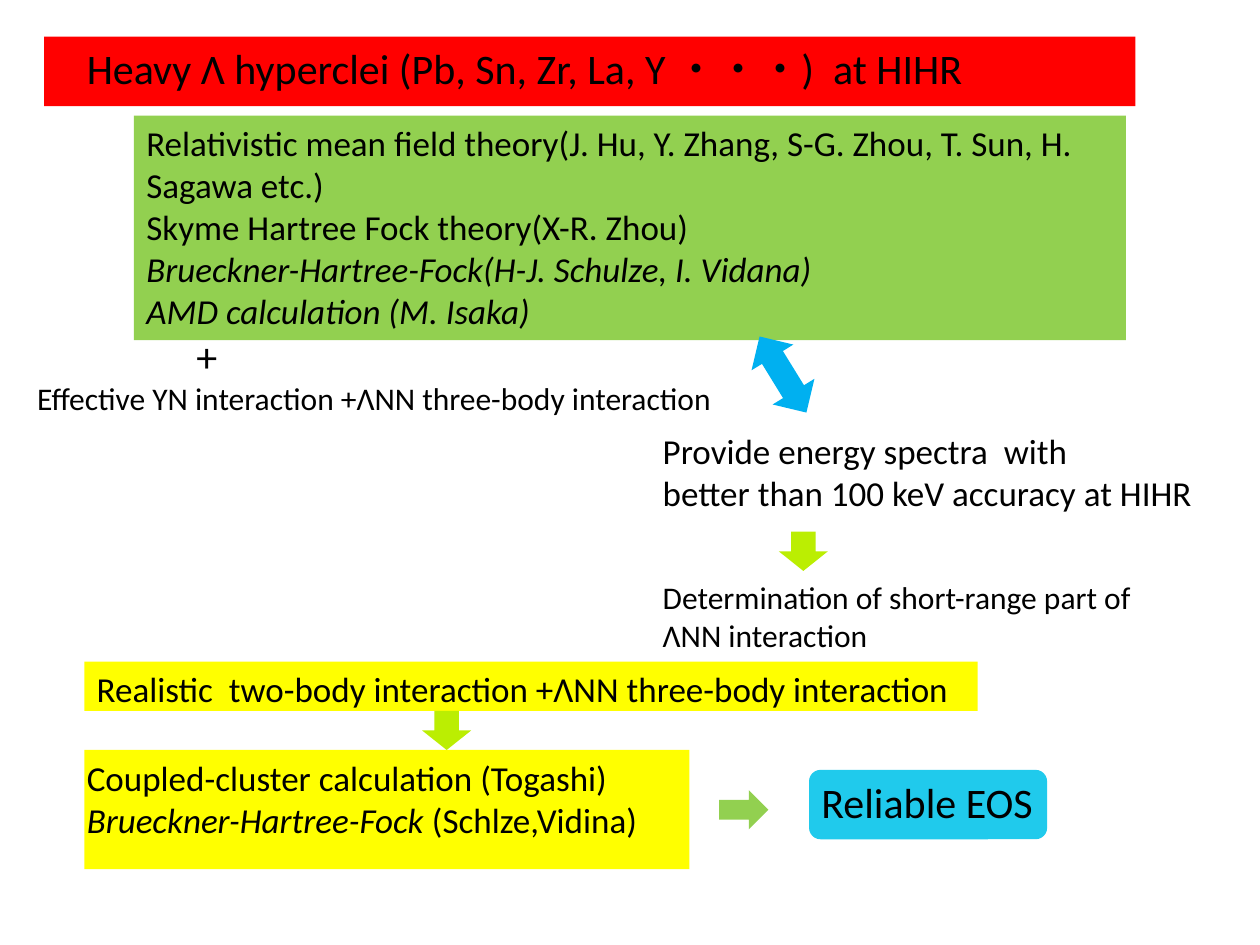
from dataclasses import dataclass

from lxml.etree import SubElement
from pptx import Presentation
from pptx.dml.color import RGBColor
from pptx.enum.shapes import MSO_SHAPE as Preset
from pptx.enum.text import MSO_ANCHOR as Anchor, PP_ALIGN as Align
from pptx.oxml.ns import qn
from pptx.util import Cm, Pt


@dataclass(frozen=True)
class Theme:
    font: str = "Calibri"
    text: str = "000000"
    title: str = "FF0000"
    theory: str = "92D050"
    realistic: str = "FFFF00"
    result: str = "20CAEC"
    exchange: str = "00B0F0"
    step: str = "BBEE02"
    large: int = 24
    medium: int = 20
    small: int = 18


THEME = Theme()
ARROW_LONG, ARROW_SHORT = 0.99, 0.79


def add_block(slide, preset, left, top, width, height, color, rotation=0):
    shape = slide.shapes.add_shape(preset, Cm(left), Cm(top), Cm(width), Cm(height))
    shape.shadow.inherit = False
    shape.fill.solid()
    shape.fill.fore_color.rgb = RGBColor.from_string(color)
    shape.line.fill.background()
    shape.rotation = rotation
    return shape


def add_arrow(slide, preset, left, top, color):
    return add_block(slide, preset, left, top, ARROW_LONG, ARROW_SHORT, color)


def write_lines(shape, size, lines, wrap=False):
    frame = shape.text_frame
    frame.word_wrap = wrap
    frame.vertical_anchor = Anchor.TOP
    for index, runs in enumerate(lines):
        paragraph = frame.paragraphs[0] if index == 0 else frame.add_paragraph()
        paragraph.alignment = Align.LEFT
        paragraph.font.name = THEME.font
        paragraph.font.size = Pt(size)
        paragraph.font.color.rgb = RGBColor.from_string(THEME.text)
        for text, italic in runs:
            run = paragraph.add_run()
            run.text = text
            if italic:
                run.font.italic = True
            east_asian = SubElement(run._r.get_or_add_rPr(), qn("a:ea"))
            east_asian.set("typeface", THEME.font)


def add_label(slide, left, top, width, height, size, *lines):
    box = slide.shapes.add_textbox(Cm(left), Cm(top), Cm(width), Cm(height))
    write_lines(box, size, lines)


def plain(text):
    return [(text, False)]


def italic(text):
    return [(text, True)]


def add_theory(slide):
    add_block(slide, Preset.RECTANGLE, 0.89, 0.74, 22, 1.4, THEME.title)
    add_label(slide, 1.5, 0.74, 21, 1.27, THEME.large,
              plain("Heavy Λ hyperclei (Pb, Sn, Zr, La, Y ・・・)  at HIHR"))
    theory = add_block(slide, Preset.RECTANGLE, 2.7, 2.33, 20, 4.53, THEME.theory)
    write_lines(theory, THEME.medium, [
        plain("Relativistic mean field theory(J. Hu, Y. Zhang, S-G. Zhou, T. Sun, H. Sagawa etc.)"),
        plain("Skyme Hartree Fock theory(X-R. Zhou)"),
        italic("Brueckner-Hartree-Fock(H-J. Schulze, I. Vidana)"),
        italic("AMD calculation (M. Isaka)"),
    ], wrap=True)
    add_label(slide, 3.71, 6.53, 0.61, 1.27, THEME.large, plain("+"))
    add_label(slide, 0.5, 7.52, 14.27, 1.02, THEME.small,
              plain("Effective YN interaction +ΛNN three-body interaction"))


def add_experiment(slide):
    add_block(slide, Preset.UP_DOWN_ARROW, 15.29, 6.65, 0.99, 1.8, THEME.exchange, 328.4)
    add_label(slide, 13.11, 8.53, 11.3, 1.96, THEME.medium,
              plain("Provide energy spectra  with"),
              plain("better than 100 keV accuracy at HIHR"))
    add_arrow(slide, Preset.DOWN_ARROW, 15.7, 10.72, THEME.step)
    add_label(slide, 13.11, 11.53, 10.08, 1.8, THEME.small,
              plain("Determination of short-range part of"),
              plain("ΛNN interaction"))


def add_outcome(slide):
    add_block(slide, Preset.RECTANGLE, 1.7, 13.34, 18.01, 0.99, THEME.realistic)
    add_label(slide, 1.7, 13.34, 17.7, 1.12, THEME.medium,
              plain("Realistic  two-body interaction +ΛNN three-body interaction"))
    add_arrow(slide, Preset.DOWN_ARROW, 8.51, 14.33, THEME.step)
    add_block(slide, Preset.RECTANGLE, 1.7, 15.12, 12.2, 2.4, THEME.realistic)
    add_label(slide, 1.5, 15.12, 11.73, 1.96, THEME.medium,
              plain("Coupled-cluster calculation (Togashi)"),
              italic("Brueckner-Hartree-Fock") + plain(" (Schlze,Vidina)"))
    add_arrow(slide, Preset.RIGHT_ARROW, 14.5, 15.93, THEME.theory)
    add_block(slide, Preset.ROUNDED_RECTANGLE, 16.31, 15.52, 4.8, 1.4, THEME.result)
    add_label(slide, 16.31, 15.52, 4.83, 1.27, THEME.large, plain("Reliable EOS"))


def main():
    presentation = Presentation()
    presentation.slide_width = Cm(25.4)
    presentation.slide_height = Cm(19.05)
    slide = presentation.slides.add_slide(presentation.slide_layouts[6])
    add_theory(slide)
    add_experiment(slide)
    add_outcome(slide)
    presentation.save("out.pptx")


if __name__ == "__main__":
    main()
